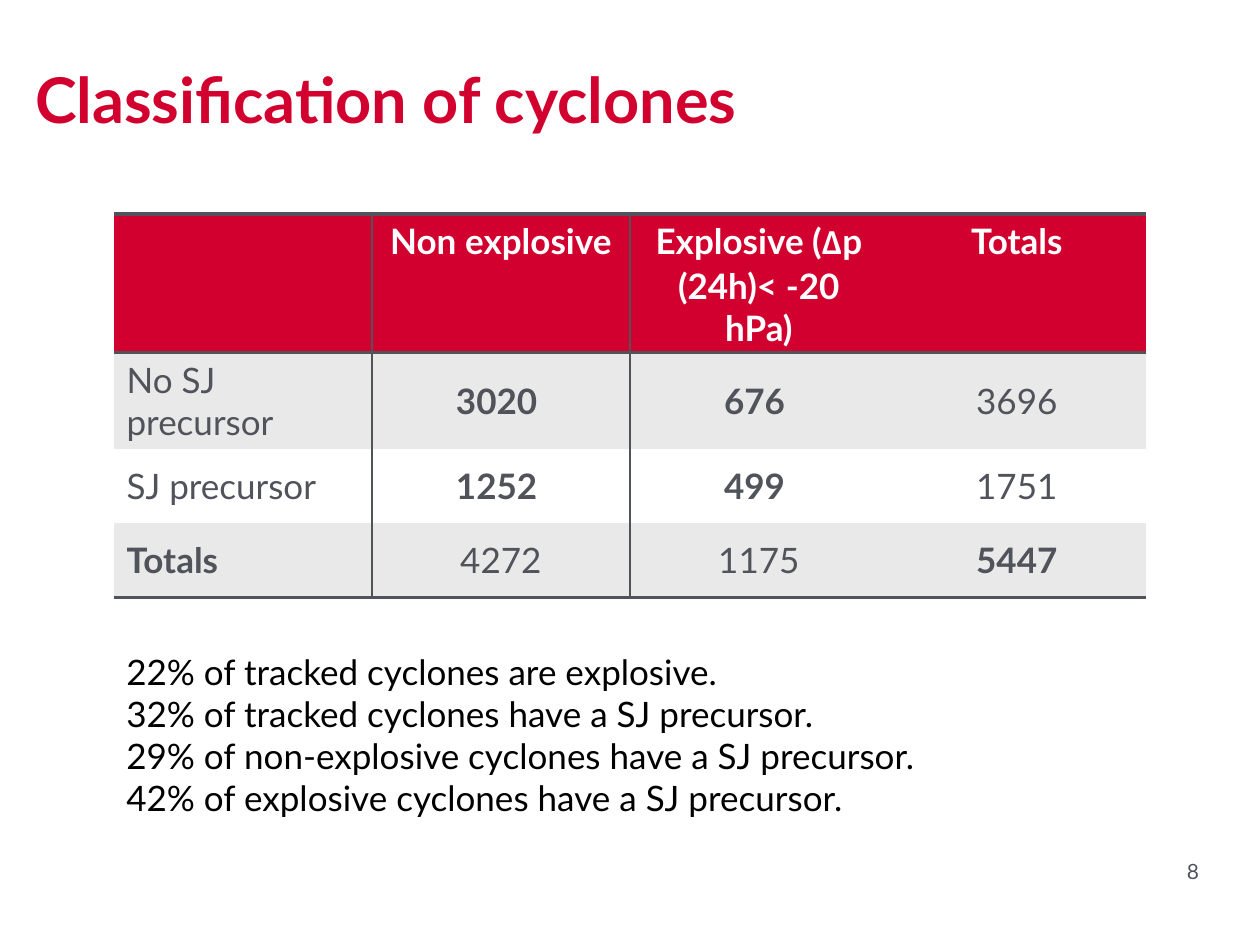
import lxml.etree
import pptx
import pptx.dml.color
import pptx.enum.text
import pptx.oxml.ns
import pptx.util

RGBColor = pptx.dml.color.RGBColor
ALIGN = pptx.enum.text.PP_ALIGN
ANCHOR = pptx.enum.text.MSO_ANCHOR

RED = RGBColor(0xD2, 0x00, 0x2E)
GREY = RGBColor(0x50, 0x53, 0x5A)
LIGHT = RGBColor(0xE9, 0xE9, 0xEA)
WHITE = RGBColor(0xFF, 0xFF, 0xFF)
BLACK = RGBColor(0x00, 0x00, 0x00)

HEADINGS = ["", "Non explosive", "Explosive (Δp (24h)< -20 hPa)", "Totals"]
COUNTS = [
    ["No SJ precursor", "3020 ", "676 ", "3696"],
    ["SJ precursor", "1252 ", "499 ", "1751"],
    ["Totals", "4272", "1175", "5447"],
]
BOLD_COUNTS = {(1, 1), (1, 2), (2, 1), (2, 2), (3, 0), (3, 3)}
FINDINGS = [
    "22% of tracked cyclones are explosive.",
    "32% of tracked cyclones have a SJ precursor.",
    "29% of non-explosive cyclones have a SJ precursor.",
    "42% of explosive cyclones have a SJ precursor.",
]


def px(n):
    """Turn whole pixels into EMU."""
    return pptx.util.Emu(round(n * 914400 / 126))


def add_run(p, text, size, color, bold=False, name="Lato"):
    """Add one formatted run to a paragraph."""
    r = p.add_run()
    r.text = text
    r.font.color.rgb = color
    for key, value in {"size": pptx.util.Pt(size), "bold": bold, "name": name}.items():
        setattr(r.font, key, value)


def add_text(s, box, lines, size, color, bold=False, align=ALIGN.LEFT, frame=None):
    """Place a text box with one paragraph per line."""
    tf = s.shapes.add_textbox(*map(px, box)).text_frame
    for key, value in {"word_wrap": True, **(frame or {})}.items():
        setattr(tf, key, value)
    for i, line in enumerate(lines):
        p = tf.add_paragraph() if i else tf.paragraphs[0]
        p.alignment = align
        add_run(p, line, size, color, bold)


def set_borders(cell, widths):
    """Draw the cell sides that have a width in points and clear the others."""
    tc_pr = cell._tc.get_or_add_tcPr()
    qn = pptx.oxml.ns.qn
    for i, side in enumerate("LRTB"):
        ln = lxml.etree.Element(qn(f"a:ln{side}"))
        tc_pr.insert(i, ln)
        width = widths.get(side, 0)
        if width:
            ln.set("w", str(pptx.util.Pt(width)))
            fill = lxml.etree.SubElement(ln, qn("a:solidFill"))
            lxml.etree.SubElement(fill, qn("a:srgbClr"), val=str(GREY))
        else:
            lxml.etree.SubElement(ln, qn("a:noFill"))


def fill_cell(cell, row, col, text):
    """Format one cell of the cyclone table and write its text."""
    header = row == 0
    cell.fill.solid()
    cell.fill.fore_color.rgb = RED if header else (LIGHT if row % 2 else WHITE)
    cell.vertical_anchor = ANCHOR.TOP if header else ANCHOR.MIDDLE
    set_borders(cell, {
        "L": 1 if col in (1, 2) else 0,
        "R": 1 if col in (0, 1) else 0,
        "T": 2 if row in (0, 1) else 0,
        "B": 2 if row in (0, len(COUNTS)) else 0,
    })
    p = cell.text_frame.paragraphs[0]
    p.alignment = ALIGN.CENTER if header or col else ALIGN.LEFT
    color = WHITE if header else GREY
    bold = header or (row, col) in BOLD_COUNTS
    before, delta, after = text.partition("Δ")
    for part, name in ((before, "Lato"), (delta, "Calibri"), (after, "Lato")):
        if part:
            add_run(p, part, 20, color, bold, name)


def add_cyclone_table(s, box, header_height):
    """Place the table of cyclone counts in its box."""
    x, y, w, h = box
    rows = [HEADINGS] + COUNTS
    table = s.shapes.add_table(len(rows), len(HEADINGS), *map(px, box)).table
    for key, value in {"first_row": False, "horz_banding": False}.items():
        setattr(table, key, value)
    for column in table.columns:
        column.width = px(w // len(HEADINGS))
    for i, row in enumerate(rows):
        table.rows[i].height = px((h - header_height) // len(COUNTS) if i else header_height)
        for j, text in enumerate(row):
            fill_cell(table.cell(i, j), i, j, text)


def main():
    """Build the cyclone classification slide."""
    prs = pptx.Presentation()
    prs.slide_width, prs.slide_height = px(1260), px(945)
    s = prs.slides.add_slide(prs.slide_layouts[6])
    no_margins = {f"margin_{side}": 0 for side in ("left", "right", "top", "bottom")}
    add_text(s, (35, 21, 1142, 115), ["Classification of cyclones"], 36, RED, True,
             frame={**no_margins, "word_wrap": False, "vertical_anchor": ANCHOR.BOTTOM})
    add_cyclone_table(s, (114, 214, 1032, 348), 126)
    add_text(s, (114, 644, 1085, 183), FINDINGS, 20, BLACK)
    add_text(s, (1106, 859, 93, 35), ["8"], 12, GREY, align=ALIGN.RIGHT, frame=no_margins)
    prs.save("out.pptx")


if __name__ == "__main__":
    main()
